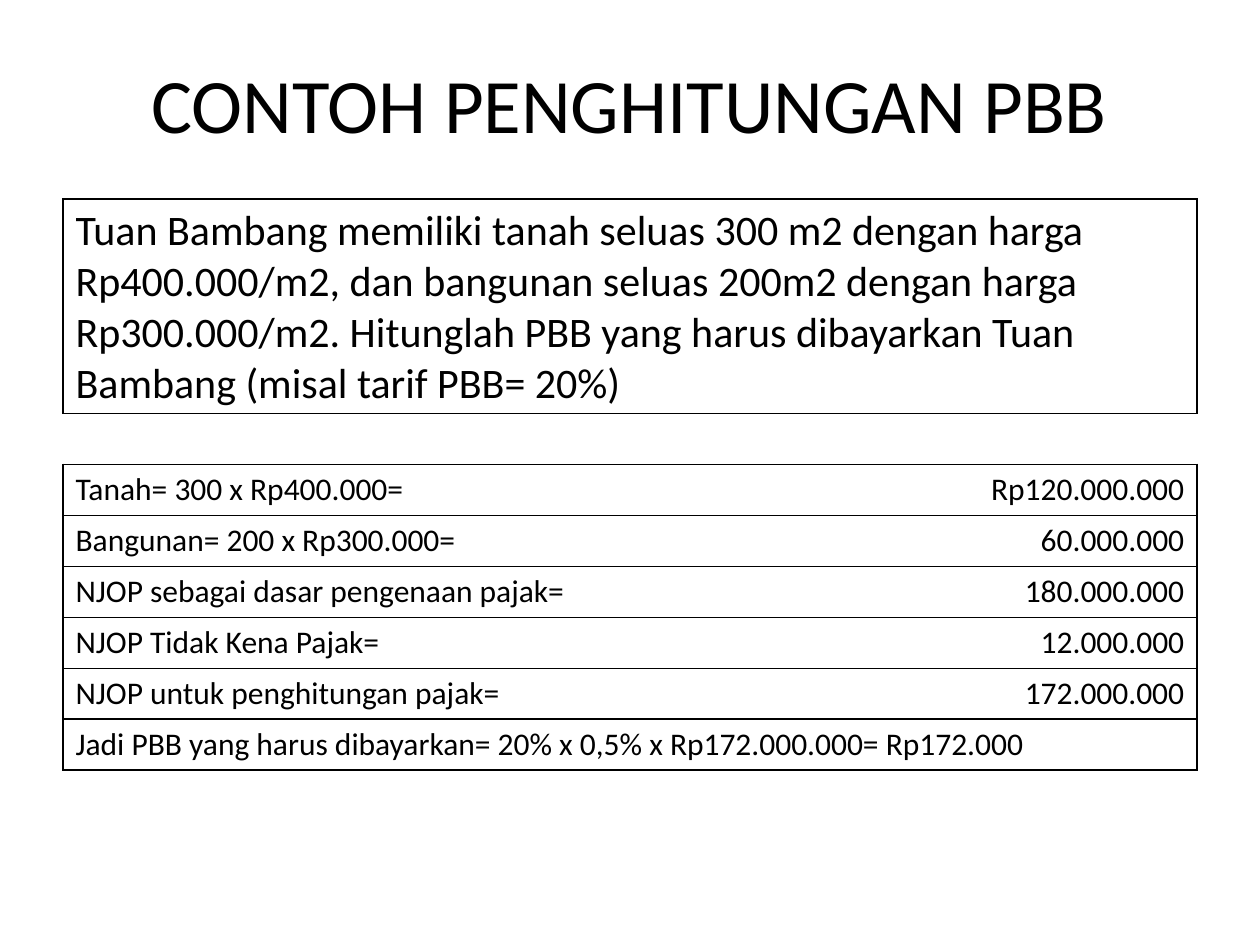
import pptx
import pptx.dml.color
import pptx.enum.text
import pptx.oxml.ns
import pptx.util
from lxml import etree

PX = 914400 // 126
COLORS = {"ink": "000000", "paper": "FFFFFF"}
FONT = "Calibri"
ALIGN = pptx.enum.text.PP_ALIGN

QUESTION = (
    "Tuan Bambang memiliki tanah seluas 300 m2 dengan harga Rp400.000/m2, "
    "dan bangunan seluas 200m2 dengan harga Rp300.000/m2. Hitunglah PBB yang "
    "harus dibayarkan Tuan Bambang (misal tarif PBB= 20%)"
)
CALCULATION = [
    ("Tanah= 300 x Rp400.000=", "Rp120.000.000"),
    ("Bangunan= 200 x Rp300.000=", "60.000.000"),
    ("NJOP sebagai dasar pengenaan pajak=", "180.000.000"),
    ("NJOP Tidak Kena Pajak=", "12.000.000"),
    ("NJOP untuk penghitungan pajak=", "172.000.000"),
]
CONCLUSION = "Jadi PBB yang harus dibayarkan= 20% x 0,5% x Rp172.000.000= Rp172.000"


def px(length):
    return pptx.util.Emu(length * PX)


def rgb(name):
    return pptx.dml.color.RGBColor.from_string(COLORS[name])


def write(frame, text, size, align):
    paragraph = frame.paragraphs[0]
    paragraph.text = text
    paragraph.alignment = align
    paragraph.font.size = pptx.util.Pt(size)
    paragraph.font.name = FONT
    paragraph.font.color.rgb = rgb("ink")


def set_borders(cell, sides):
    properties = cell._tc.get_or_add_tcPr()
    qn = pptx.oxml.ns.qn
    for side in "LRTB":
        line = etree.SubElement(properties, qn(f"a:ln{side}"), w=str(pptx.util.Pt(1)))
        if side in sides:
            fill = etree.SubElement(line, qn("a:solidFill"))
            etree.SubElement(fill, qn("a:srgbClr"), val=COLORS["ink"])
        else:
            etree.SubElement(line, qn("a:noFill"))


def fill_cell(cell, text, sides, size=18, align=ALIGN.LEFT):
    set_borders(cell, sides)
    cell.fill.solid()
    cell.fill.fore_color.rgb = rgb("paper")
    write(cell.text_frame, text, size, align)


def fill_full_row(table, row, text, size=18):
    first, last = table.cell(row, 0), table.cell(row, 1)
    fill_cell(first, text, "LRTB", size)
    set_borders(last, "LRTB")
    first.merge(last)


def add_title(slide, text):
    title = slide.shapes.add_textbox(px(63), px(38), px(1134), px(130))
    title.text_frame.word_wrap = True
    title.text_frame.vertical_anchor = pptx.enum.text.MSO_ANCHOR.MIDDLE
    write(title.text_frame, text, 44, ALIGN.CENTER)


def add_calculation(slide):
    heights = [204] + [51] * (len(CALCULATION) + 2)
    table = slide.shapes.add_table(
        len(heights), 2, px(63), px(199), px(1134), px(sum(heights))
    ).table
    table.first_row = False
    table.horz_banding = False
    for column, width in zip(table.columns, (882, 252)):
        column.width = px(width)
    for row, height in zip(table.rows, heights):
        row.height = px(height)

    fill_full_row(table, 0, QUESTION, 24)
    for column in range(2):
        fill_cell(table.cell(1, column), "", "TB")
    for row, (label, amount) in enumerate(CALCULATION, start=2):
        fill_cell(table.cell(row, 0), label, "LTB")
        fill_cell(table.cell(row, 1), amount, "RTB", align=ALIGN.RIGHT)
    fill_full_row(table, len(heights) - 1, CONCLUSION)


def main():
    deck = pptx.Presentation()
    deck.slide_width, deck.slide_height = px(1260), px(945)
    slide = deck.slides.add_slide(deck.slide_layouts[6])
    slide.background.fill.solid()
    slide.background.fill.fore_color.rgb = rgb("paper")
    add_title(slide, "CONTOH PENGHITUNGAN PBB")
    add_calculation(slide)
    deck.save("out.pptx")


if __name__ == "__main__":
    main()
